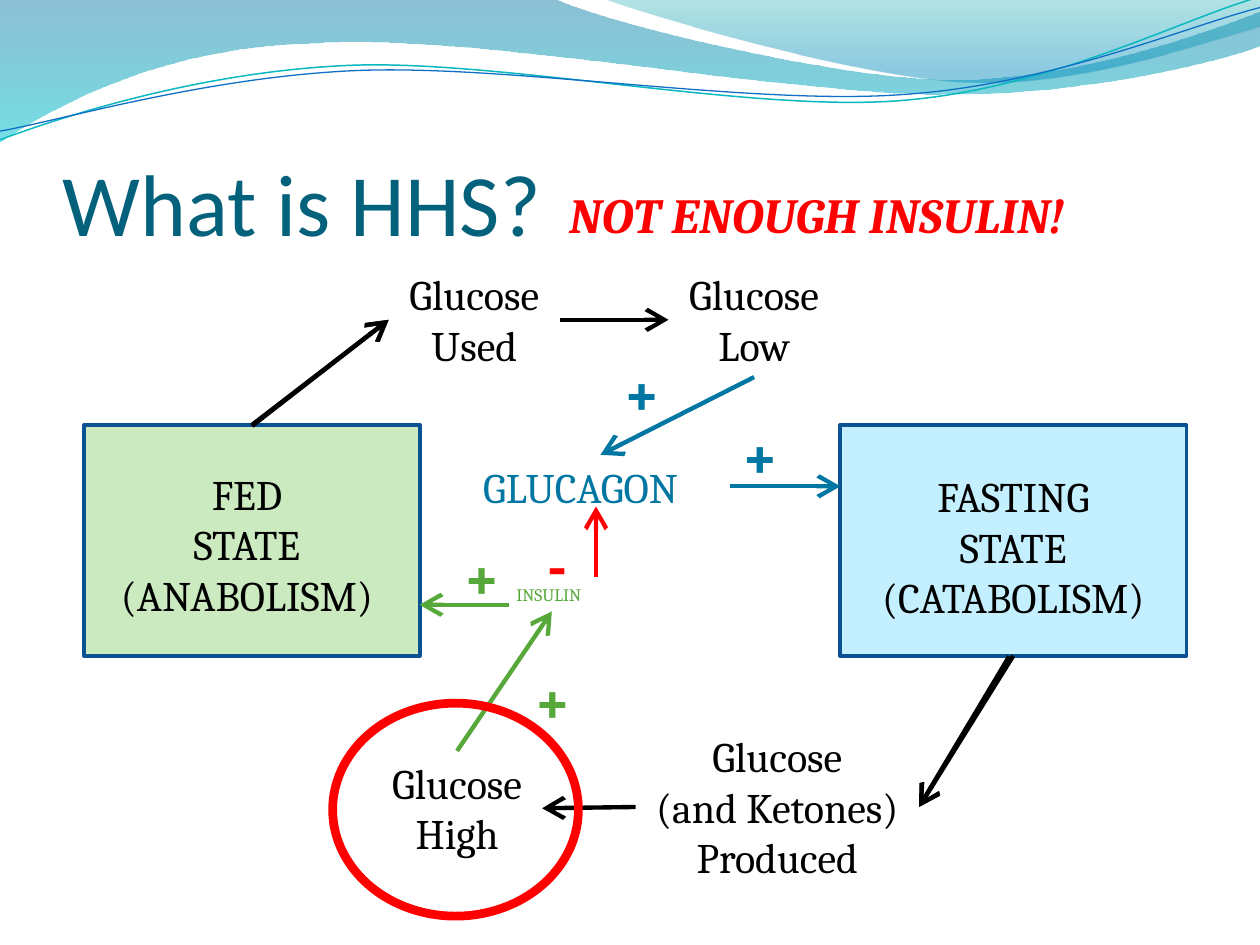
from dataclasses import dataclass
from typing import Optional, Union

from pptx import Presentation
from pptx import util as u
from pptx.dml.color import RGBColor
from pptx.enum import shapes, text
from pptx.oxml.ns import qn
from lxml import etree


@dataclass(frozen=True)
class Theme:
    black: str = "000000"
    red: str = "FF0000"
    blue: str = "0076A3"
    green: str = "55A839"
    title: str = "04617B"
    outline: str = "0B5292"
    fed: str = "CBEAC0"
    fasting: str = "C4EFFF"
    title_font: str = "Calibri"
    body_font: str = "Cambria"
    title_size: float = 50
    sign_size: float = 36
    banner_size: float = 28
    body_size: float = 24
    small_size: float = 10
    arrow_width: float = 2.5


THEME = Theme()
TOP, LEFT, BOTTOM, RIGHT = range(4)
Box = tuple[float, float, float, float]
Point = tuple[float, float]


@dataclass(frozen=True)
class Label:
    name: str
    words: str  # one paragraph per line
    box: Box
    color: str = THEME.black
    size: float = THEME.body_size
    font: str = THEME.body_font
    bold: bool = False
    italic: bool = False
    centered: bool = False
    wrap: bool = False


@dataclass(frozen=True)
class Panel:
    name: str
    box: Box
    fill: str


@dataclass(frozen=True)
class Arrow:
    start: Union[Point, tuple[str, int]]  # a point, or a part and its side
    end: Union[Point, tuple[str, int]]
    color: str = THEME.black


@dataclass(frozen=True)
class Wave:
    start: Point
    steps: list[tuple]  # two numbers: straight; six numbers: Bézier curve
    line: Optional[tuple[str, float]] = None
    stops: tuple = ()  # position, colour, opacity in percent


WAVES = [
    Wave((0, 0), [(316.8, -0.7), (342.7, 12.2, 478.1, 45.4, 545.8, 45.4),
                  (614.2, 45.4, 689.8, 18.7, 720, 6.5), (720.7, 25.9),
                  (707.8, 31.7, 626.4, 54.7, 537.1, 54),
                  (447.8, 54, 275, 20.2, 185, 24.5),
                  (92.9, 25.9, 33.1, 59.8, -0.7, 81.4)],
         stops=((0, "0074A1", 45), (1, "00C6CF", 55))),
    Wave((344.9, -0.7), [(366.5, 7.9, 491, 44.6, 553.7, 46.8),
                         (616.3, 49.7, 691.9, 23, 720, 15.1), (720, 0)],
         stops=((0, "00A1A9", 30), (0.8, "008BBF", 45))),
    Wave((0, 79.9), [(34.6, 67, 113.8, 41, 199.4, 37.4),
                     (284.4, 33.8, 427, 64.1, 513.4, 57.6),
                     (599.8, 51.1, 675.4, 10.8, 718.6, -1.4)], line=("0AB8BF", 0.85)),
    Wave((0, 74.9), [(33.8, 69.1, 118.1, 43.9, 203.8, 40.3),
                     (290.2, 36.7, 429.8, 60.5, 516.2, 54),
                     (601.9, 48.2, 677.5, 15.1, 720, 4.3)], line=("0F6FC6", 0.75)),
]

PANELS = [Panel("fed", (48, 242.8, 192, 132), THEME.fed),
          Panel("fasting", (480, 242.8, 198, 132), THEME.fasting)]

LABELS = [
    Label("fed label", "FED\nSTATE\n(ANABOLISM)", (54, 264, 174.2, 94.3),
          centered=True, wrap=True),
    Label("fasting label", "FASTING\nSTATE\n(CATABOLISM)", (480, 265.4, 198, 94.3),
          centered=True, wrap=True),
    Label("used", "Glucose\nUsed", (222.1, 150, 97.9, 65.5), centered=True),
    Label("low", "Glucose\nLow", (382, 150, 97.9, 65.5), centered=True),
    Label("produced", "Glucose\n(and Ketones)\nProduced", (363.2, 414, 162, 94.3),
          centered=True),
    Label("high", "Glucose\nHigh", (212.6, 429.1, 97.2, 65.5), centered=True),
    Label("insulin", "INSULIN", (288, 330, 54.7, 19.4), THEME.green, THEME.small_size),
    Label("glucagon", "GLUCAGON", (269, 259.9, 148.3, 36), THEME.blue),
    Label("banner", "NOT ENOUGH INSULIN!", (318.2, 102.2, 335.5, 41), THEME.red,
          THEME.banner_size, bold=True, italic=True),
]
# Stimulating and inhibiting signs: symbol, left, top, width, colour
SIGNS = [("+", 298, 373.7, 34.6, THEME.green), ("+", 257.5, 303.1, 34.6, THEME.green),
         ("-", 305.7, 296.6, 27.4, THEME.red), ("+", 349, 198, 34.6, THEME.blue),
         ("+", 416.6, 234, 34.6, THEME.blue)]
LABELS += [Label(f"sign {i}", symbol, (left, top, width, 51.1), color,
                 THEME.sign_size, bold=True)
           for i, (symbol, left, top, width, color) in enumerate(SIGNS)]

ARROWS = [
    Arrow(("fed", TOP), ("used", LEFT)),
    Arrow((144, 243.4), ("used", LEFT)),
    Arrow(("used", RIGHT), ("low", LEFT)),
    Arrow(("fasting", BOTTOM), ("produced", RIGHT)),
    Arrow((576.7, 375.1), ("produced", RIGHT)),
    Arrow(("produced", LEFT), ("high", RIGHT)),
    Arrow((290.9, 345.6), (239.8, 345.6), THEME.green),
    Arrow(("high", TOP), ("insulin", BOTTOM), THEME.green),
    Arrow((340.6, 329.8), (340.6, 289.4), THEME.red),
    Arrow(("glucagon", RIGHT), (480.2, 277.9), THEME.blue),
    Arrow(("low", BOTTOM), ("glucagon", TOP), THEME.blue),
]


def rgb(color: str) -> RGBColor:
    return RGBColor.from_string(color)


def points(values) -> list:
    return [u.Pt(value) for value in values]


def set_line(line, color: str, width: float) -> None:
    line.color.rgb = rgb(color)
    line.width = u.Pt(width)


def bend(shape, steps: list[tuple]) -> None:
    """Join the three segments of each six-number step into one Bézier curve."""
    segments = iter(list(shape._element.iter(qn("a:lnTo"))))
    for step in steps:
        first = next(segments)
        if len(step) == 6:
            first.tag = qn("a:cubicBezTo")
            for _ in range(2):
                extra = next(segments)
                first.append(extra[0])
                extra.getparent().remove(extra)


def draw_wave(slide, wave: Wave) -> None:
    corners = [tuple(points(step[i:i + 2])) for step in wave.steps
               for i in range(0, len(step), 2)]
    builder = slide.shapes.build_freeform(*points(wave.start))
    builder.add_line_segments(corners, close=bool(wave.stops))
    shape = builder.convert_to_shape()
    bend(shape, wave.steps)
    shape.shadow.inherit = False
    if wave.line:
        shape.fill.background()
        set_line(shape.line, *wave.line)
        return
    shape.line.fill.background()
    shape.fill.gradient()
    shape.fill.gradient_angle = 270
    for stop, (position, color, _) in zip(shape.fill.gradient_stops, wave.stops):
        stop.position, stop.color.rgb = position, rgb(color)
    for tint, (_, _, opacity) in zip(shape._element.iter(qn("a:srgbClr")), wave.stops):
        etree.SubElement(tint, qn("a:alpha"), val=str(opacity * 1000))


def draw_shape(slide, kind, box: Box, fill: Optional[str], line: str, width: float):
    shape = slide.shapes.add_shape(kind, *points(box))
    shape.shadow.inherit = False
    if fill:
        shape.fill.solid()
        shape.fill.fore_color.rgb = rgb(fill)
    else:
        shape.fill.background()
    set_line(shape.line, line, width)
    return shape


def draw_label(slide, label: Label):
    box = slide.shapes.add_textbox(*points(label.box))
    frame = box.text_frame
    frame.word_wrap = label.wrap
    frame.text = label.words
    for paragraph in frame.paragraphs:
        font = paragraph.font
        font.name, font.size, font.color.rgb = label.font, u.Pt(label.size), rgb(label.color)
        font.bold, font.italic = label.bold, label.italic
        paragraph.alignment = text.PP_ALIGN.CENTER if label.centered else text.PP_ALIGN.LEFT
    return box


def draw_arrow(slide, arrow: Arrow, parts: dict) -> None:
    link = slide.shapes.add_connector(shapes.MSO_CONNECTOR.STRAIGHT, 0, 0, 0, 0)
    if isinstance(arrow.start[0], str):
        link.begin_connect(parts[arrow.start[0]], arrow.start[1])
    else:
        link.begin_x, link.begin_y = points(arrow.start)
    if isinstance(arrow.end[0], str):
        link.end_connect(parts[arrow.end[0]], arrow.end[1])
    else:
        link.end_x, link.end_y = points(arrow.end)
    set_line(link.line, arrow.color, THEME.arrow_width)
    etree.SubElement(link.line._get_or_add_ln(), qn("a:tailEnd"),
                     type="arrow", w="lg", len="lg")
    etree.SubElement(link._element.spPr, qn("a:effectLst"))


def main() -> None:
    deck = Presentation()
    deck.slide_width, deck.slide_height = u.Pt(720), u.Pt(540)
    slide = deck.slides.add_slide(deck.slide_layouts[6])

    # Header waves and title
    for wave in WAVES:
        draw_wave(slide, wave)
    title = draw_label(slide, Label("title", "What is HHS?", (36, 55.4, 648, 90), THEME.title,
                                    THEME.title_size, THEME.title_font, wrap=True)).text_frame
    title.vertical_anchor = text.MSO_ANCHOR.BOTTOM
    title.margin_left = title.margin_right = title.margin_bottom = 0

    # State panels, labels and the arrows that join them
    parts = {p.name: draw_shape(slide, shapes.MSO_SHAPE.RECTANGLE, p.box, p.fill,
                                THEME.outline, 2) for p in PANELS}
    parts.update({label.name: draw_label(slide, label) for label in LABELS})
    for arrow in ARROWS:
        draw_arrow(slide, arrow, parts)

    # Ring around high glucose
    draw_shape(slide, shapes.MSO_SHAPE.OVAL, (190.1, 401.8, 140.4, 121.7), None, THEME.red, 5)
    deck.save("out.pptx")


if __name__ == "__main__":
    main()
